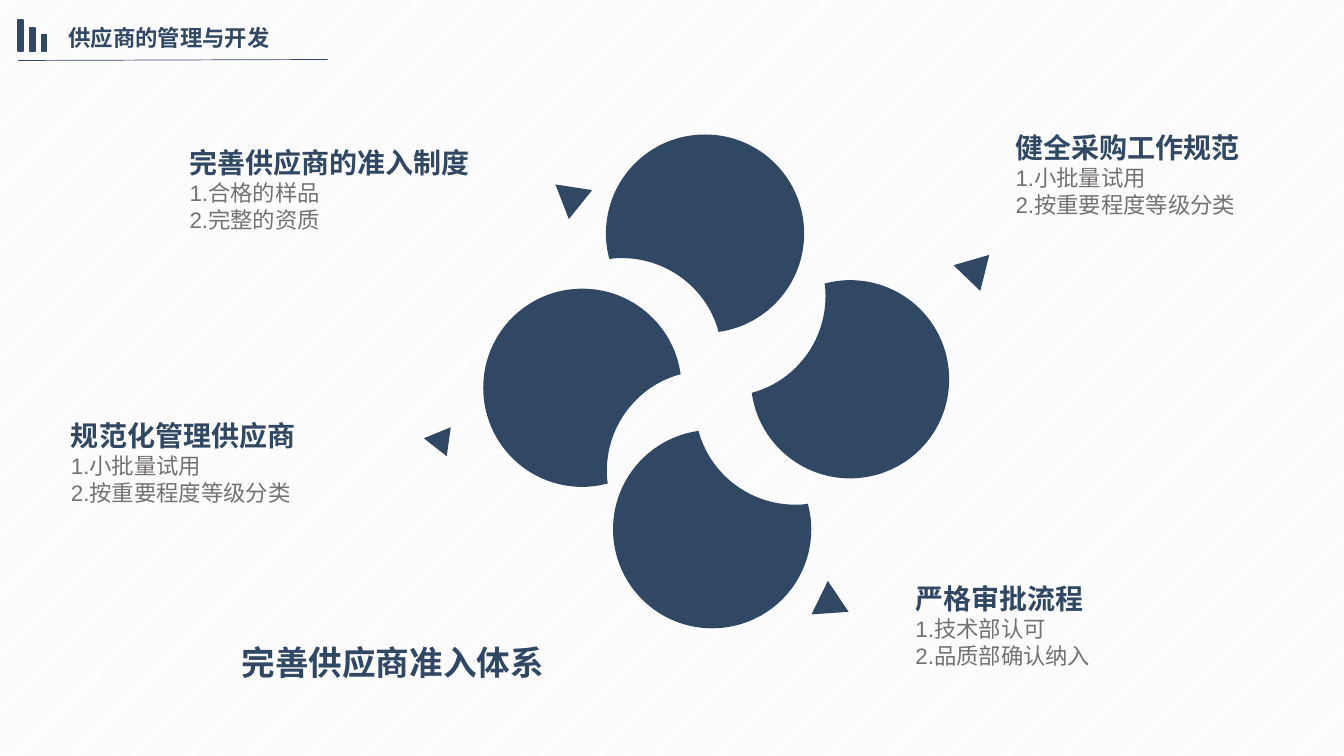
import lxml.etree
import pptx
import pptx.dml.color
import pptx.enum.dml
import pptx.enum.shapes
import pptx.enum.text
import pptx.oxml.ns
import pptx.util

Pt = pptx.util.Pt
SHAPES = pptx.enum.shapes.MSO_SHAPE
ANCHOR = pptx.enum.text.MSO_ANCHOR
ALIGN = pptx.enum.text.PP_ALIGN
qn = pptx.oxml.ns.qn

NAVY = "314865"
GREY = "767171"

PETAL_CURVES = [
    (0, -70.8),
    (39.2, -70.8), (70.8, -39.2), (70.8, 0),
    (70.8, 36), (44, 65.5), (9.7, 70.2),
    (1.8, 40), (-26.3, 17.5), (-59.4, 17.5),
    (-62.5, 17.5), (-65.6, 17.6), (-68.3, 18.2),
    (-70, 12), (-70.8, 6), (-70.8, 0),
    (-70.8, -39.2), (-39.2, -70.8), (0, -70.8),
]
PETALS = [(503.6, 166.9, 0), (416, 277, 3), (607.2, 270.9, 1), (508.7, 378, 2)]
POINTERS = [
    (392.4, 127.4, 26.6, 23, 308.8),
    (679, 180.7, 26.6, 23, 283.9),
    (582.5, 420.5, 26.6, 23, 116.1),
    (301.2, 305.3, 20.9, 18, 277.9),
]
MEASURES = [
    ((135.4, 103.7, 203.8, 63.4), "完善供应商的准入制度", ["1.合格的样品", "2.完整的资质"]),
    ((725.4, 93.2, 200.9, 82), "健全采购工作规范", ["1.小批量试用", "2.按重要程度等级分类"]),
    ((50.7, 298.8, 203.8, 63.4), "规范化管理供应商", ["1.小批量试用", "2.按重要程度等级分类"]),
    ((653.9, 415.1, 197.3, 82), "严格审批流程", ["1.技术部认可", "2.品质部确认纳入"]),
]


def colour(value):
    return pptx.dml.color.RGBColor.from_string(value)


def paint(shape, outlined=False):
    shape.shadow.inherit = False
    shape.fill.solid()
    shape.fill.fore_color.rgb = colour(NAVY)
    if outlined:
        shape.line.color.rgb = colour(NAVY)
        shape.line.width = Pt(1)
    else:
        shape.line.fill.background()


def place(shape, box):
    shape.left, shape.top, shape.width, shape.height = [Pt(length) for length in box]


def prepare(frame, anchor, inset_x=7.2, inset_y=3.6):
    frame.word_wrap = True
    frame.auto_size = pptx.enum.text.MSO_AUTO_SIZE.NONE
    frame.vertical_anchor = anchor
    frame.margin_left = frame.margin_right = Pt(inset_x)
    frame.margin_top = frame.margin_bottom = Pt(inset_y)


def write(paragraph, wording, size, ink, bold, align=ALIGN.LEFT):
    paragraph.alignment = align
    paragraph.space_before = Pt(0)
    run = paragraph.add_run()
    run.text = wording
    run.font.name = "Arial"
    run.font.size = Pt(size)
    run.font.bold = bold
    run.font.color.rgb = colour(ink)


def clear_bullet(paragraph):
    properties = paragraph._p.get_or_add_pPr()
    properties.set("marL", "0")
    properties.set("indent", "0")
    lxml.etree.SubElement(properties, qn("a:buNone"))


def add_header(slide, box):
    left, top, width, height = box
    bottom = top + 22.8
    for index, bar_height in enumerate((22.3, 16.6, 11.5)):
        bar = slide.shapes.add_shape(
            SHAPES.RECTANGLE, Pt(left - 0.2 + 8.4 * index), Pt(bottom - bar_height), Pt(3.8), Pt(bar_height))
        paint(bar, outlined=True)

    heading = slide.shapes.title
    place(heading, (left + 28.8, top, 191.5, 26.6))
    prepare(heading.text_frame, ANCHOR.MIDDLE)
    write(heading.text_frame.paragraphs[0], "供应商的管理与开发", 16, NAVY, True, ALIGN.JUSTIFY)

    underline = slide.shapes.add_connector(
        pptx.enum.shapes.MSO_CONNECTOR.STRAIGHT,
        Pt(left), Pt(top + height), Pt(left + width), Pt(top + height - 0.7))
    underline.line.color.rgb = colour(NAVY)
    underline.line.width = Pt(0.5)
    lxml.etree.SubElement(underline._element.spPr, qn("a:effectLst"))


def bend_segments(shape):
    segments = list(shape._element.iter(qn("a:lnTo")))
    for first in range(0, len(segments), 3):
        curve = lxml.etree.Element(qn("a:cubicBezTo"))
        segments[first].addprevious(curve)
        for segment in segments[first:first + 3]:
            curve.append(segment[0])
            segment.getparent().remove(segment)


def add_petal(slide, x, y, quarter_turns):
    outline = PETAL_CURVES
    for _ in range(quarter_turns):
        outline = [(-dy, dx) for dx, dy in outline]
    outline = [(Pt(x + dx), Pt(y + dy)) for dx, dy in outline]
    builder = slide.shapes.build_freeform(*outline[0])
    builder.add_line_segments(outline[1:], close=True)
    petal = builder.convert_to_shape()
    bend_segments(petal)
    paint(petal)


def add_pointer(slide, box, rotation):
    pointer = slide.shapes.add_shape(SHAPES.ISOSCELES_TRIANGLE, *[Pt(length) for length in box])
    pointer.rotation = rotation
    paint(pointer)


def add_measure(body, box, heading, steps):
    place(body, box)
    frame = body.text_frame
    prepare(frame, ANCHOR.TOP, 0, 0)
    write(frame.paragraphs[0], heading, 20, NAVY, True)
    for step in steps:
        write(frame.add_paragraph(), step, 16, GREY, False)
    for paragraph in frame.paragraphs:
        clear_bullet(paragraph)


def add_conclusion(slide, box):
    conclusion = slide.shapes.add_textbox(*[Pt(length) for length in box])
    prepare(conclusion.text_frame, ANCHOR.TOP)
    write(conclusion.text_frame.paragraphs[0], "完善供应商准入体系", 24, NAVY, True)


def main():
    deck = pptx.Presentation()
    deck.slide_width, deck.slide_height = Pt(960), Pt(540)
    slide = deck.slides.add_slide(deck.slide_layouts.get_by_name("Comparison"))

    backdrop = slide.background.fill
    backdrop.patterned()
    backdrop.pattern = pptx.enum.dml.MSO_PATTERN.DARK_UPWARD_DIAGONAL
    backdrop.fore_color.rgb = colour("F2F2F2")
    backdrop.back_color.rgb = colour("FFFFFF")

    for petal in PETALS:
        add_petal(slide, *petal)
    for *box, rotation in POINTERS:
        add_pointer(slide, box, rotation)
    bodies = list(slide.placeholders)[1:]
    for body, measure in zip(bodies, MEASURES):
        add_measure(body, *measure)
    add_conclusion(slide, (165.4, 455, 281.5, 36))
    add_header(slide, (13, 13.7, 221, 29.5))

    deck.save("out.pptx")


if __name__ == "__main__":
    main()
